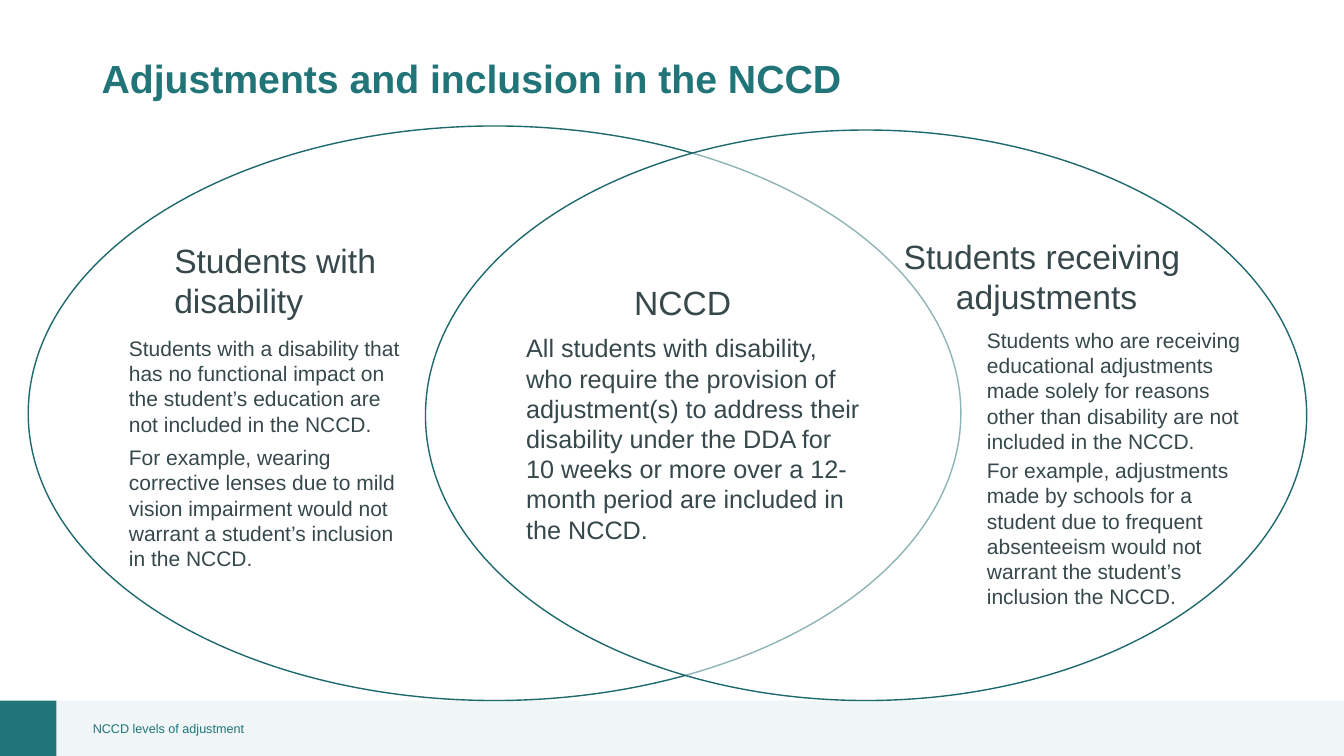
from pptx import Presentation
from pptx.dml.color import RGBColor
from pptx.enum.shapes import MSO_SHAPE
from pptx.enum.text import MSO_ANCHOR, PP_ALIGN
from pptx.oxml.ns import qn
from pptx.util import Inches, Pt
from lxml import etree

RECT, OVAL = MSO_SHAPE.RECTANGLE, MSO_SHAPE.OVAL
TOP, MIDDLE = MSO_ANCHOR.TOP, MSO_ANCHOR.MIDDLE
LEFT, CENTER = PP_ALIGN.LEFT, PP_ALIGN.CENTER
FONT = "Arial"
COLORS = {
    "teal": "217478",
    "edge": "1E696D",
    "band": "F0F6F7",
    "white": "FFFFFF",
    "text": "36484C",
}


def color(name):
    return RGBColor.from_string(COLORS[name])


def add_shape(slide, kind, box, fill):
    shape = slide.shapes.add_shape(kind, *map(Inches, box))
    shape.shadow.inherit = False
    shape.fill.solid()
    shape.fill.fore_color.rgb = color(fill)
    shape.line.fill.background()
    return shape


def add_oval(slide, box):
    """Half-transparent white oval with a thin outline."""
    oval = add_shape(slide, OVAL, box, "white")
    tint = oval.fill._xPr.find(qn("a:solidFill"))[0]
    etree.SubElement(tint, qn("a:alpha")).set("val", "50000")
    oval.line.color.rgb = color("edge")
    oval.line.width = Pt(1)


def add_text(slide, box, paras, size, ink="text", bold=False, align=LEFT,
             anchor=TOP, before=(), spacing=None, inset=0.1):
    """Text box; before holds the space above each paragraph in points."""
    frame = slide.shapes.add_textbox(*map(Inches, box)).text_frame
    frame.word_wrap = True
    frame.vertical_anchor = anchor
    frame.margin_left = Inches(inset)
    for i, words in enumerate(paras):
        para = frame.paragraphs[0] if i == 0 else frame.add_paragraph()
        para.alignment = align
        if before:
            para.space_before = Pt(before[i])
        if spacing:
            para.line_spacing = spacing
        run = para.add_run()
        run.text = words
        run.font.name = FONT
        run.font.size = Pt(size)
        run.font.bold = bold
        run.font.color.rgb = color(ink)


def add_footer(slide):
    add_shape(slide, RECT, (0.56, 6.95, 12.77, 0.55), "band")
    add_shape(slide, RECT, (0, 6.95, 0.56, 0.55), "teal")
    add_text(slide, (0.92, 6.95, 4.61, 0.55), ["NCCD levels of adjustment"],
             9, ink="teal", anchor=MIDDLE, inset=0)


def main():
    deck = Presentation()
    deck.slide_width, deck.slide_height = Inches(13.33), Inches(7.5)
    slide = deck.slides.add_slide(deck.slide_layouts[6])

    # Footer and title
    add_footer(slide)
    add_text(slide, (0.91, 0.08, 10.37, 1.45),
             ["Adjustments and inclusion in the NCCD"],
             28, ink="teal", bold=True, anchor=MIDDLE, spacing=0.9)

    # Overlapping ovals
    add_oval(slide, (0.28, 1.25, 9.25, 5.7))
    add_oval(slide, (4.22, 1.29, 8.74, 5.66))

    # Overlap: students included
    add_text(slide, (6.19, 2.75, 1.85, 0.5), ["NCCD"], 24)
    add_text(slide, (5.12, 3.25, 3.54, 2.52), [
        "All students with disability, who require the provision of "
        "adjustment(s) to address their disability under the DDA for "
        "10 weeks or more over a 12-month period are included in the NCCD.",
    ], 18)

    # Left: disability only
    add_text(slide, (1.63, 2.33, 3.49, 0.5), ["Students with disability"], 24)
    add_text(slide, (1.18, 3.28, 2.99, 3.13), [
        "Students with a disability that has no functional impact on the "
        "student’s education are not included in the NCCD.",
        "For example, wearing corrective lenses due to mild vision "
        "impairment would not warrant a student’s inclusion in the NCCD.",
    ], 15, before=(6, 6))

    # Right: adjustments only
    add_text(slide, (8.37, 2.29, 4.02, 0.91),
             ["Students receiving ", "adjustments"], 24, align=CENTER)
    add_text(slide, (9.69, 3.2, 2.76, 3.26), [
        "Students who are receiving educational adjustments made solely for "
        "reasons other than disability are not included in the NCCD.",
        "For example, adjustments made by schools for a student due to "
        "frequent absenteeism would not warrant the student’s inclusion "
        "the NCCD.",
    ], 15, before=(0, 3))

    deck.save("out.pptx")


if __name__ == "__main__":
    main()
